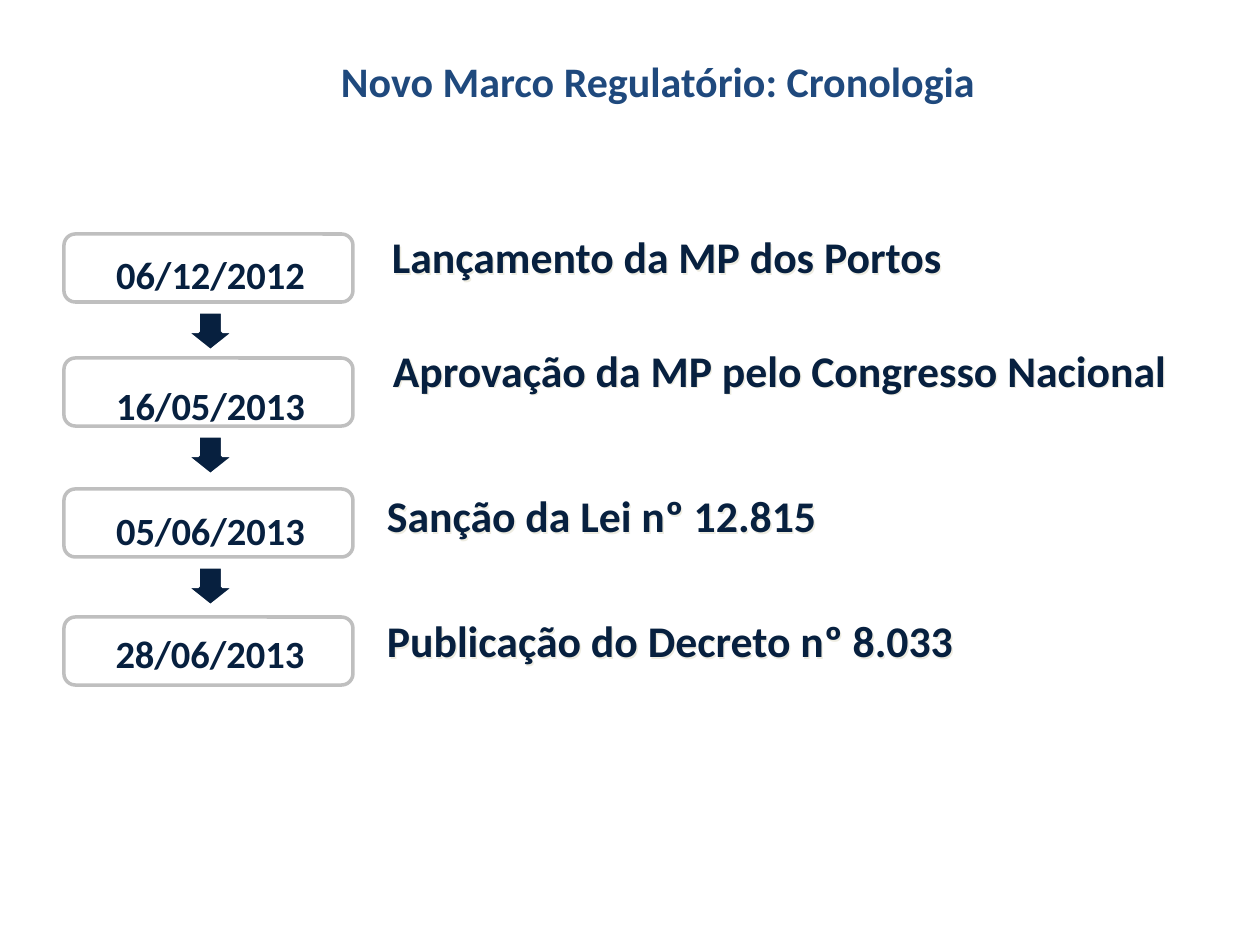
import pptx
import pptx.dml.color
import pptx.enum.shapes
import pptx.enum.text
import pptx.oxml
import pptx.oxml.ns
import pptx.util
from dataclasses import dataclass

PX = 914400 // 126  # EMU in one px
ALIGN = pptx.enum.text.PP_ALIGN
ANCHOR = pptx.enum.text.MSO_ANCHOR
SHAPE = pptx.enum.shapes.MSO_SHAPE


@dataclass(frozen=True)
class Theme:
    font: str = "Calibri"
    navy: str = "07203F"
    title_blue: str = "1F497D"
    border: str = "BFBFBF"
    white: str = "FFFFFF"
    text_shadow: str = "EEECE1"
    title_size: int = 24
    event_size: int = 25
    date_size: int = 22
    line_width: int = 2


THEME = Theme()

BOX_LEFT, BOX_WIDTH, BOX_HEIGHT = 64, 289, 68
ARROW_LEFT, ARROW_WIDTH, ARROW_HEIGHT, ARROW_GAP = 186, 49, 39, 10

# Box top, date, date frame, event, event frame, event line spacing
STEPS = [
    (234, "06/12/2012", (74, 217, 273, 96),
     "Lançamento da MP dos Portos", (392, 236, 798, 52), 0.9),
    (358, "16/05/2013", (74, 348, 273, 96),
     "Aprovação da MP pelo Congresso Nacional", (393, 354, 816, 100), 0.8),
    (489, "05/06/2013", (74, 473, 273, 96),
     "Sanção da Lei nº 12.815", (387, 495, 1089, 49), 0.9),
    (617, "28/06/2013", (72, 596, 276, 96),
     "Publicação do Decreto nº 8.033", (387, 620, 1089, 49), 0.9),
]


def color(value):
    return pptx.dml.color.RGBColor.from_string(value)


def emu(frame):
    return [length * PX for length in frame]


def set_attributes(target, values):
    for name, value in values.items():
        setattr(target, name, value)


def add_text(slide, text, frame, size, text_color, paragraph_format,
             anchor=ANCHOR.TOP, inset=0):
    shape = slide.shapes.add_textbox(*emu(frame))
    set_attributes(shape.text_frame, {
        "word_wrap": True, "vertical_anchor": anchor,
        "margin_left": 2 * inset * PX, "margin_right": 2 * inset * PX,
        "margin_top": inset * PX, "margin_bottom": inset * PX,
    })
    paragraph = shape.text_frame.paragraphs[0]
    set_attributes(paragraph, paragraph_format)
    run = paragraph.add_run()
    run.text = text
    set_attributes(run.font, {
        "name": THEME.font, "size": pptx.util.Pt(size), "bold": True})
    run.font.color.rgb = color(text_color)
    return shape


def add_text_shadow(shape):
    # On an unfilled text box the shadow falls from the letters
    shape._element.spPr.append(pptx.oxml.parse_xml(
        f'<a:effectLst {pptx.oxml.ns.nsdecls("a")}>'
        f'<a:outerShdw dist="{2 * PX}" dir="2700000" algn="tl" rotWithShape="0">'
        f'<a:srgbClr val="{THEME.text_shadow}"/></a:outerShdw></a:effectLst>'))


def add_outline_shape(slide, kind, frame, line_color, fill_color=None):
    shape = slide.shapes.add_shape(kind, *emu(frame))
    shape.shadow.inherit = False
    if fill_color:
        shape.fill.solid()
        shape.fill.fore_color.rgb = color(fill_color)
    else:
        shape.fill.background()
    shape.line.color.rgb = color(line_color)
    shape.line.width = pptx.util.Pt(THEME.line_width)


def add_step(slide, top, date, date_frame, event, event_frame, spacing):
    event_box = add_text(slide, event, event_frame, THEME.event_size,
                         THEME.navy, {"line_spacing": spacing})
    add_text_shadow(event_box)
    add_text(slide, date, date_frame, THEME.date_size, THEME.navy,
             {"alignment": ALIGN.CENTER, "line_spacing": 1.4}, ANCHOR.MIDDLE)
    add_outline_shape(slide, SHAPE.ROUNDED_RECTANGLE,
                      (BOX_LEFT, top, BOX_WIDTH, BOX_HEIGHT), THEME.border)


def add_arrow_below(slide, top):
    arrow_top = top + BOX_HEIGHT + ARROW_GAP
    add_outline_shape(slide, SHAPE.DOWN_ARROW,
                      (ARROW_LEFT, arrow_top, ARROW_WIDTH, ARROW_HEIGHT),
                      THEME.white, THEME.navy)


def main():
    presentation = pptx.Presentation()
    presentation.slide_width, presentation.slide_height = emu((1260, 945))
    slide = presentation.slides.add_slide(presentation.slide_layouts[6])

    # Timeline: dated boxes with their events
    for step in STEPS:
        add_step(slide, *step)

    # Arrows between the boxes
    for step in STEPS[:-1]:
        add_arrow_below(slide, step[0])

    # Title
    add_text(slide, "Novo Marco Regulatório: Cronologia", (165, -3, 822, 115),
             THEME.title_size, THEME.title_blue, {"alignment": ALIGN.RIGHT},
             ANCHOR.BOTTOM, inset=6)

    presentation.save("out.pptx")


if __name__ == "__main__":
    main()
